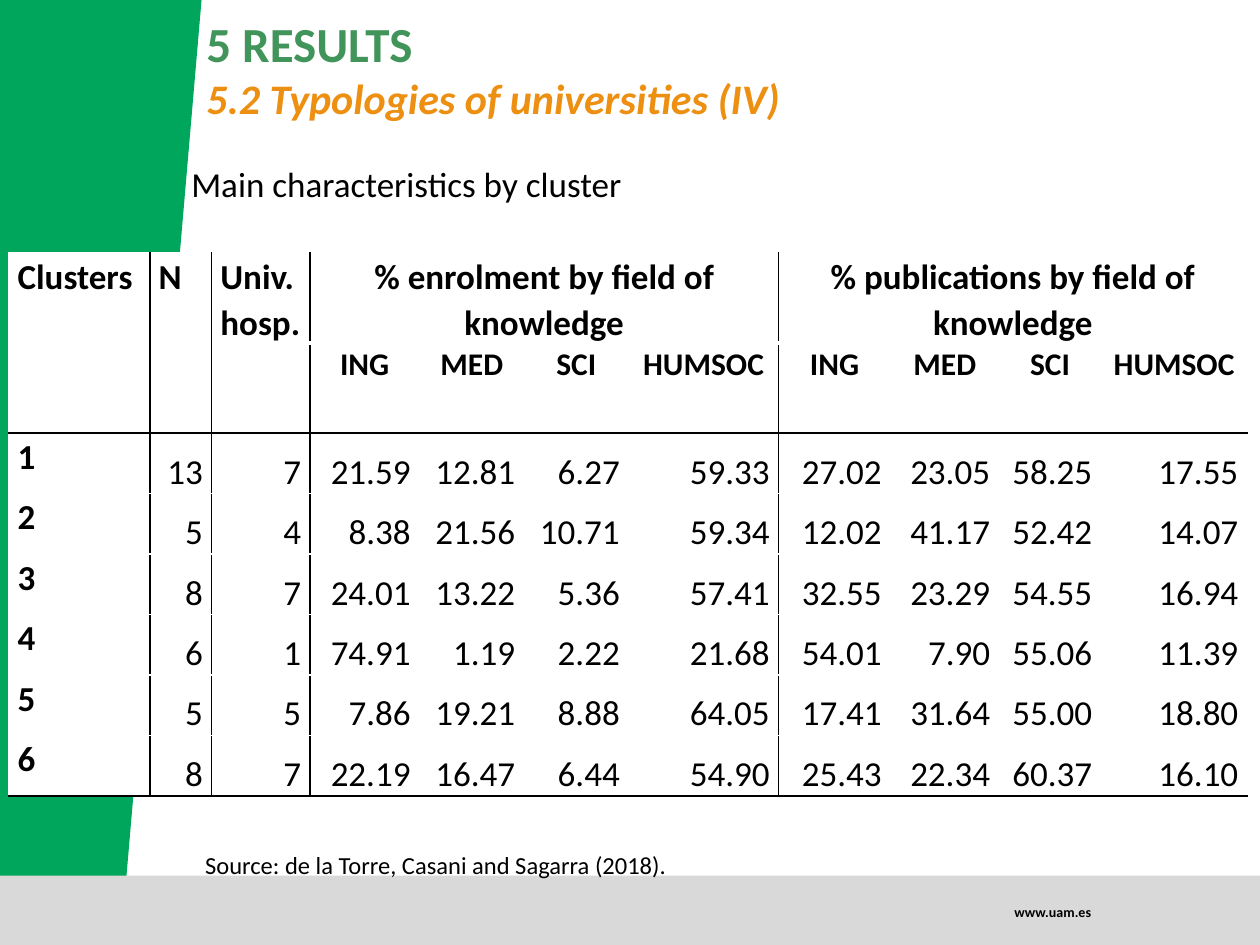
from lxml import etree
from pptx import Presentation
from pptx.dml.color import RGBColor
from pptx.enum.shapes import MSO_SHAPE
from pptx.enum.text import MSO_ANCHOR, MSO_AUTO_SIZE, PP_ALIGN
from pptx.oxml.ns import qn
from pptx.util import Inches, Pt

LEFT, MID, RIGHT = PP_ALIGN.LEFT, PP_ALIGN.CENTER, PP_ALIGN.RIGHT
TOP, CENTRE, LOW = MSO_ANCHOR.TOP, MSO_ANCHOR.MIDDLE, MSO_ANCHOR.BOTTOM
FIT = MSO_AUTO_SIZE.SHAPE_TO_FIT_TEXT
RECT = MSO_SHAPE.RECTANGLE

HEX = {"green": "00A65C", "grey": "D9D9D9", "head": "42955A",
       "sub": "ED8F11", "ink": "000000", "paper": "FFFFFF"}

FIELDS = ["ING", "MED", "SCI", "HUMSOC"]
HEADS = ["Clusters", "N", "Univ. hosp.",
         "% enrolment by field of knowledge", "", "", "",
         "% publications by field of knowledge", "", "", ""]
DATA = """
1 13 7 21.59 12.81 6.27 59.33 27.02 23.05 58.25 17.55
2 5 4 8.38 21.56 10.71 59.34 12.02 41.17 52.42 14.07
3 8 7 24.01 13.22 5.36 57.41 32.55 23.29 54.55 16.94
4 6 1 74.91 1.19 2.22 21.68 54.01 7.90 55.06 11.39
5 5 5 7.86 19.21 8.88 64.05 17.41 31.64 55.00 18.80
6 8 7 22.19 16.47 6.44 54.90 25.43 22.34 60.37 16.10
"""
ROWS = [HEADS, ["", "", ""] + FIELDS * 2]
ROWS += [line.split() for line in DATA.strip().splitlines()]

# Grid of 100 columns by 75 rows, each a tenth of an inch
COLS = [11.2, 4.9, 7.8, 8.7, 8.3, 8.3, 11.9, 8.9, 8.6, 8.1, 11.6]
HIGH = [7.1, 7.1] + [4.8] * 6
SPANS = [(0, c, 1, c) for c in range(3)] + [(0, 3, 0, 6), (0, 7, 0, 10)]
RULES = {1, 2, 3, 7}    # columns with a black line on their left
BARS = {2, 8}           # rows with a black line above them


def unit(n):
    return Inches(n / 10)


def tint(name):
    return RGBColor.from_string(HEX[name])


class Deck:
    def __init__(self, font):
        self.font = font
        self.file = Presentation()
        self.file.slide_width, self.file.slide_height = unit(100), unit(75)
        self.slide = self.file.slides.add_slide(self.file.slide_layouts[6])
        self.shapes = self.slide.shapes

    def paint(self, shape, fill):
        shape.shadow.inherit = False
        shape.fill.solid()
        shape.fill.fore_color.rgb = tint(fill)
        shape.line.fill.background()

    def rect(self, box, fill):
        self.paint(self.shapes.add_shape(RECT, *map(unit, box)), fill)

    def free(self, dots, fill):
        pen = self.shapes.build_freeform(*dots[0], scale=unit(1))
        pen.add_line_segments(dots[1:], close=True)
        self.paint(pen.convert_to_shape(), fill)

    def line(self, para, text, size, tone="ink", align=LEFT, **form):
        para.alignment = align
        run = para.add_run()
        run.text = text
        run.font.color.rgb = tint(tone)
        look = {"name": self.font, "size": Pt(size), "bold": False, **form}
        for key, val in look.items():
            setattr(run.font, key, val)

    def text(self, box, lines, anchor=TOP):
        frame = self.shapes.add_textbox(*map(unit, box)).text_frame
        form = {"word_wrap": True, "auto_size": FIT, "vertical_anchor": anchor}
        for key, val in form.items():
            setattr(frame, key, val)
        for i, line in enumerate(lines):
            para = frame.add_paragraph() if i else frame.paragraphs[0]
            self.line(para, **line)

    def edge(self, cell, sides):
        props = cell._tc.get_or_add_tcPr()
        for i, (side, (tone, width)) in enumerate(sides.items()):
            line = etree.Element(qn("a:" + side), w=str(Pt(width)))
            fill = etree.SubElement(line, qn("a:solidFill"))
            etree.SubElement(fill, qn("a:srgbClr"), val=HEX[tone])
            props.insert(i, line)

    def cell(self, cell, text, size, align, anchor, bold):
        form = {"margin_left": unit(0.7), "margin_right": unit(0.7),
                "margin_top": 0, "margin_bottom": 0,
                "vertical_anchor": anchor}
        for key, val in form.items():
            setattr(cell, key, val)
        cell.fill.solid()
        cell.fill.fore_color.rgb = tint("paper")
        para = cell.text_frame.paragraphs[0]
        para.line_spacing = 1.07
        self.line(para, text, size, align=align, bold=bold)

    def table(self, left, top):
        box = (left, top, sum(COLS), sum(HIGH))
        grid = self.shapes.add_table(len(ROWS), len(COLS),
                                     *map(unit, box)).table
        grid.first_row = grid.horz_banding = False
        for col, size in zip(grid.columns, COLS):
            col.width = unit(size)
        for row, size in zip(grid.rows, HIGH):
            row.height = unit(size)
        for r, c, down, over in SPANS:
            grid.cell(r, c).merge(grid.cell(down, over))
        for r, row in enumerate(ROWS):
            for c, text in enumerate(row):
                cell = grid.cell(r, c)
                if cell.is_spanned:
                    continue
                if c < 3 and r < 2 or c == 0:
                    align, anchor = LEFT, TOP
                else:
                    align, anchor = (MID, TOP) if r < 2 else (RIGHT, LOW)
                self.cell(cell, text, 18 if r == 1 else 20, align, anchor,
                          r < 2 or c == 0)
                wide = cell.span_width if cell.is_merge_origin else 1
                tall = cell.span_height if cell.is_merge_origin else 1
                end, low = c + wide, r + tall
                marks = {"lnL": c in RULES, "lnR": end in RULES,
                         "lnT": r in BARS, "lnB": low in BARS}
                sides = {k: ("ink" if on else "paper", 1)
                         for k, on in marks.items()}
                if low == 1:
                    sides["lnB"] = ("paper", 3)
                self.edge(cell, sides)


def main():
    deck = Deck("Calibri")

    # Side band and footer
    deck.free([(0, 0), (15.5, 0), (10.4, 69.6), (0, 69.5)], "green")
    deck.rect((0, 69.5, 100, 5.5), "grey")
    deck.text((75.3, 71.2, 12.3, 2.4),
              [dict(text="www.uam.es", size=8, bold=True, align=RIGHT)],
              CENTRE)

    # Titles
    deck.text((15.4, 0.6, 84.6, 9.8), [
        dict(text="5 RESULTS", size=28, tone="head", bold=True),
        dict(text="5.2 Typologies of universities (IV)", size=24,
             tone="sub", bold=True, italic=True)])
    deck.text((14.2, 12.4, 73.6, 4.4),
              [dict(text="Main characteristics by cluster", size=20)])

    # Cluster table and its source
    deck.table(0.7, 20.1)
    deck.text((15.3, 67, 69.3, 3.4),
              [dict(text="Source: de la Torre, Casani and Sagarra (2018).",
                    size=14)])
    deck.file.save("out.pptx")


if __name__ == "__main__":
    main()
